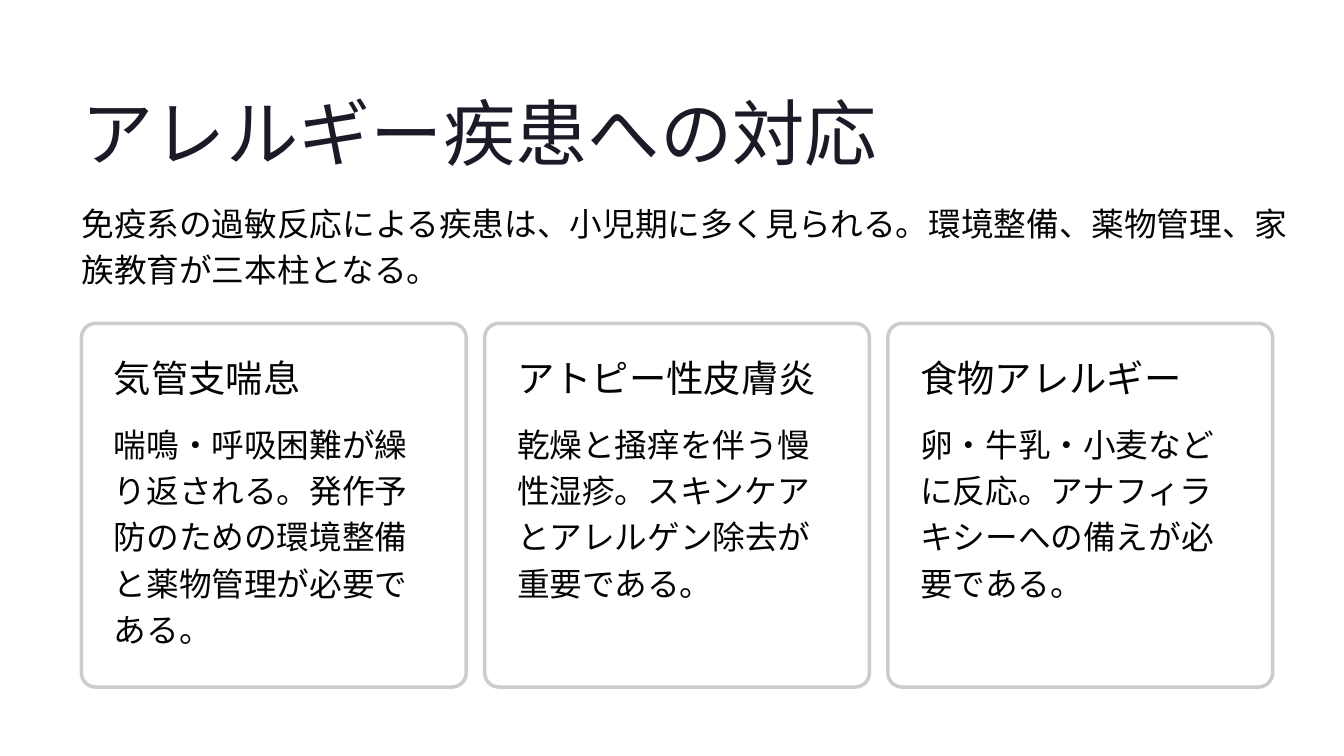
import pptx
import pptx.dml.color
import pptx.enum.shapes
import pptx.enum.text
import pptx.util
from lxml import etree
from pptx.oxml.ns import qn

LEFT = 0.97
CARD_TOP, CARD_W, CARD_H, CARD_STEP = 3.85, 4.58, 4.33, 4.8
PAD = 0.385
INK, TITLE_INK, EDGE, PAPER = "030303", "1B1B27", "CCCCCC", "FFFFFF"
CARDS = [
    ("気管支喘息", "喘鳴・呼吸困難が繰り返される。発作予防のための環境整備と薬物管理が必要である。"),
    ("アトピー性皮膚炎", "乾燥と掻痒を伴う慢性湿疹。スキンケアとアレルゲン除去が重要である。"),
    ("食物アレルギー", "卵・牛乳・小麦などに反応。アナフィラキシーへの備えが必要である。"),
]


def color(value):
    """Turn a hex string into a colour."""
    return pptx.dml.color.RGBColor.from_string(value)


def inches(box):
    """Turn a box in inches into lengths."""
    return [pptx.util.Inches(v) for v in box]


def write(sp, text, font, size, leading, ink=INK, wrap=True):
    """Fill a shape with one left-aligned paragraph without margins."""
    tf = sp.text_frame
    tf.text = text
    tf.word_wrap = wrap
    tf.auto_size = pptx.enum.text.MSO_AUTO_SIZE.NONE
    tf.vertical_anchor = pptx.enum.text.MSO_ANCHOR.TOP
    tf.margin_left = tf.margin_top = tf.margin_right = tf.margin_bottom = 0
    p = tf.paragraphs[0]
    p.alignment = pptx.enum.text.PP_ALIGN.LEFT
    p.line_spacing = pptx.util.Pt(leading)
    p.space_before = pptx.util.Pt(0)
    r = p.runs[0]
    r.font.name = font
    r.font.size = pptx.util.Pt(size)
    r.font.color.rgb = color(ink)


def add_title(s, box, text):
    """Place the slide title in its placeholder."""
    sp = s.shapes.title
    sp.left, sp.top, sp.width, sp.height = inches(box)
    write(sp, text, "Inter", 62, 77.5, TITLE_INK, wrap=False)


def add_body(s, box, text):
    """Add a block of running text."""
    write(s.shapes.add_textbox(*inches(box)), text, "Lato", 28, 39.5)


def add_card(s, box, heading, body):
    """Add an outlined card with a heading and running text."""
    x, y, w, h = box
    sp = s.shapes.add_shape(pptx.enum.shapes.MSO_SHAPE.ROUNDED_RECTANGLE, *inches(box))
    sp.adjustments[0] = 0.039
    sp.shadow.inherit = False
    sp.fill.solid()
    sp.fill.fore_color.rgb = color(PAPER)
    fill = sp.fill._xPr.find(qn("a:solidFill"))
    etree.SubElement(fill[0], qn("a:alpha"), val="95000")
    sp.line.color.rgb = color(EDGE)
    sp.line.width = pptx.util.Pt(3)
    inner = w - 0.8
    head = s.shapes.add_textbox(*inches((x + PAD, y + 0.38, inner, 0.63)))
    write(head, heading, "Inter", 32, 38.5, wrap=False)
    add_body(s, (x + PAD, y + 1.13, inner, 2.57), body)


def main():
    """Build the slide and save it."""
    prs = pptx.Presentation()
    prs.slide_width, prs.slide_height = inches((16, 9))
    s = prs.slides.add_slide(prs.slide_layouts[5])
    add_title(s, (LEFT, 1.01, 9.48, 1.08), "アレルギー疾患への対応")
    add_body(s, (LEFT, 2.35, 14.43, 1.28),
             "免疫系の過敏反応による疾患は、小児期に多く見られる。環境整備、薬物管理、家族教育が三本柱となる。")
    for i, (heading, body) in enumerate(CARDS):
        add_card(s, (LEFT + i * CARD_STEP, CARD_TOP, CARD_W, CARD_H), heading, body)
    prs.save("out.pptx")


if __name__ == "__main__":
    main()
